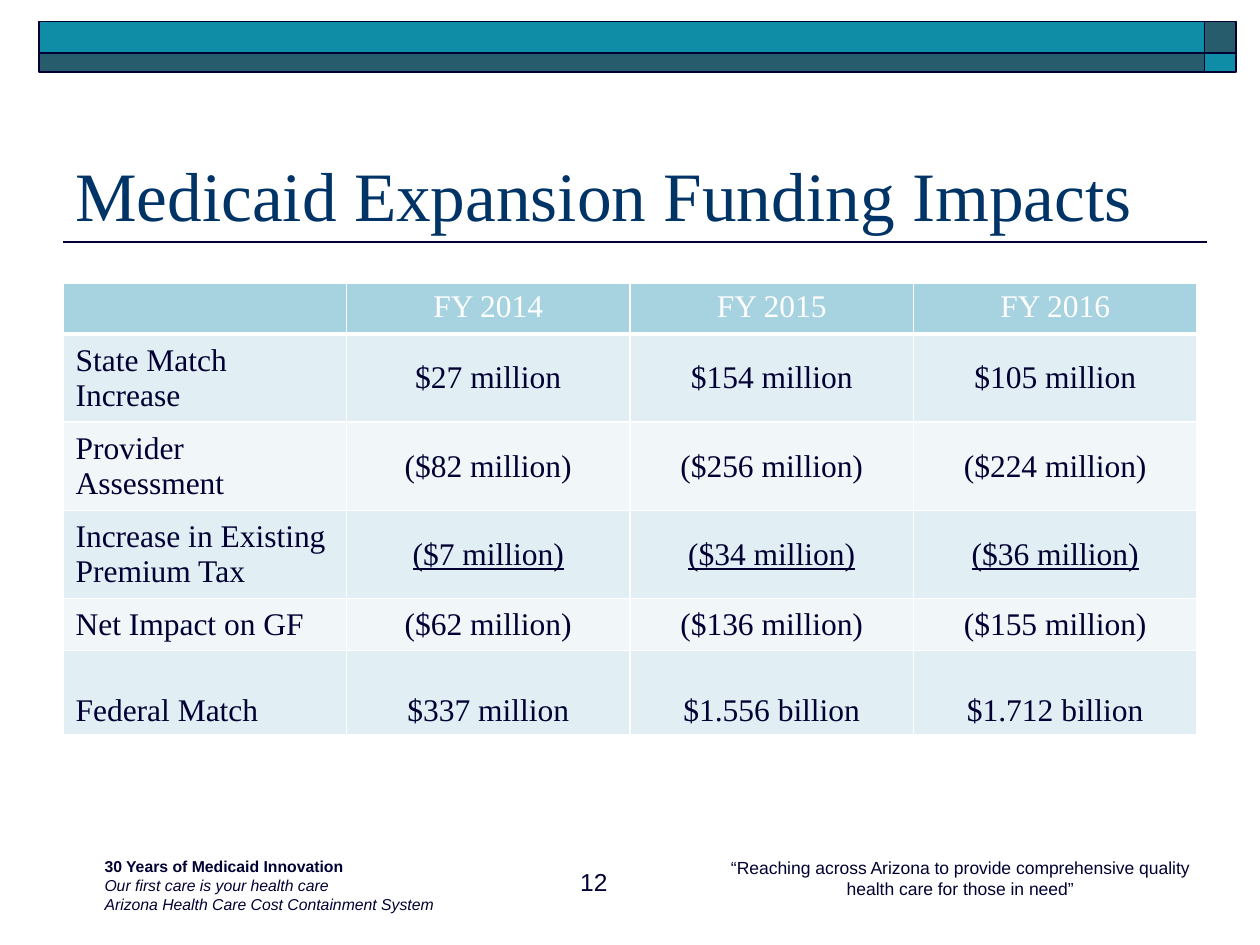
"""Build the Medicaid expansion funding slide with its table and footers."""
from dataclasses import dataclass

from pptx import Presentation
from pptx.dml.color import RGBColor
from pptx.enum import shapes, text
from pptx.oxml import parse_xml
from pptx.oxml.ns import nsdecls
from pptx.util import Inches, Pt


@dataclass(frozen=True)
class Theme:
    ink: str = "000033"
    navy: str = "003366"
    teal: str = "108DA6"
    slate: str = "275C6D"
    header: str = "A7D2DF"
    bands: tuple = ("E1EEF3", "F1F7F9")
    white: str = "FFFFFF"
    serif: str = "Times New Roman"
    sans: str = "Arial"
    title_size: float = 39.6
    table_size: int = 18
    number_size: int = 14
    quote_size: int = 10
    footer_size: int = 9


THEME = Theme()
TITLE = "Medicaid Expansion Funding Impacts"
NUMBER = "12"
QUOTE = "“Reaching across Arizona to provide comprehensive quality health care for those in need”"
FOOTER = [
    ("30 Years of Medicaid Innovation", {"bold": True}),
    ("Our first care is your health care", {"italic": True}),
    ("Arizona Health Care Cost Containment System", {"italic": True}),
]
ROWS = [
    ("", "FY 2014", "FY 2015", "FY 2016"),
    ("State Match Increase", "$27 million", "$154 million", "$105 million"),
    ("Provider Assessment", "($82 million)", "($256 million)", "($224 million)"),
    ("Increase in Existing Premium Tax", "($7 million)", "($34 million)", "($36 million)"),
    ("Net Impact on GF", "($62 million)", "($136 million)", "($155 million)"),
    ("Federal Match", "$337 million", "$1.556 billion", "$1.712 billion"),
]
ROW_HEIGHTS = [0.37, 0.65, 0.65, 0.65, 0.41, 0.67]
UNDERLINED_ROW = 3
COLUMN_WIDTH = 2.25
BANNER_COLUMNS = [(0.31, 9.25), (9.56, 0.25)]
BANNER_ROWS = [(0.17, 0.25), (0.42, 0.15)]

ALIGN = text.PP_ALIGN
ANCHOR = text.MSO_ANCHOR


def color(value):
    return RGBColor.from_string(value)


def write(paragraph, words, size, font=THEME.sans, fill=THEME.ink, align=ALIGN.LEFT,
          bold=False, italic=False, underline=False):
    paragraph.alignment = align
    span = paragraph.add_run()
    span.text = words
    span.font.name, span.font.size = font, Pt(size)
    span.font.bold, span.font.italic, span.font.underline = bold, italic, underline
    span.font.color.rgb = color(fill)


def add_box(page, place, lines, size, anchor=ANCHOR.TOP, indent=0.1, **style):
    frame = page.shapes.add_textbox(*map(Inches, place)).text_frame
    frame.word_wrap = True
    frame.vertical_anchor = anchor
    frame.margin_left = Inches(indent)
    for index, (words, extra) in enumerate(lines):
        paragraph = frame.add_paragraph() if index else frame.paragraphs[0]
        write(paragraph, words, size, **style, **extra)


def add_banner(page):
    for row, (top, height) in enumerate(BANNER_ROWS):
        for column, (left, width) in enumerate(BANNER_COLUMNS):
            block = page.shapes.add_shape(
                shapes.MSO_SHAPE.RECTANGLE, *map(Inches, (left, top, width, height)))
            block.shadow.inherit = False
            block.fill.solid()
            block.fill.fore_color.rgb = color(THEME.teal if row == column else THEME.slate)
            block.line.color.rgb = color(THEME.ink)
            block.line.width = Pt(1)


def add_rule(page):
    rule = page.shapes.add_connector(
        shapes.MSO_CONNECTOR.STRAIGHT, *map(Inches, (0.5, 1.92, 9.58, 1.92)))
    rule.line.color.rgb = color(THEME.ink)
    rule.line.width = Pt(1)
    rule._element.spPr.append(parse_xml(f"<a:effectLst {nsdecls('a')}/>"))


def set_borders(cell, bottom):
    properties = cell._tc.get_or_add_tcPr()
    for index, (side, width) in enumerate(zip("LRTB", (1, 1, 1, bottom))):
        properties.insert(index, parse_xml(
            f'<a:ln{side} {nsdecls("a")} w="{Pt(width)}"><a:solidFill>'
            f'<a:srgbClr val="{THEME.white}"/></a:solidFill></a:ln{side}>'))


def add_funding_table(page):
    columns = len(ROWS[0])
    table = page.shapes.add_table(
        len(ROWS), columns, Inches(0.5), Inches(2.25),
        Inches(COLUMN_WIDTH * columns), Inches(sum(ROW_HEIGHTS))).table
    for column in table.columns:
        column.width = Inches(COLUMN_WIDTH)
    last = len(ROWS) - 1
    for row, values in enumerate(ROWS):
        table.rows[row].height = Inches(ROW_HEIGHTS[row])
        anchor = {0: ANCHOR.TOP, last: ANCHOR.BOTTOM}.get(row, ANCHOR.MIDDLE)
        for column, words in enumerate(values):
            cell = table.cell(row, column)
            cell.vertical_anchor = anchor
            cell.fill.solid()
            cell.fill.fore_color.rgb = color(THEME.bands[(row - 1) % 2] if row else THEME.header)
            set_borders(cell, 1 if row else 3)
            if words:
                write(cell.text_frame.paragraphs[0], words, THEME.table_size, font=THEME.serif,
                      fill=THEME.ink if row else THEME.white,
                      align=ALIGN.CENTER if column else ALIGN.LEFT,
                      underline=row == UNDERLINED_ROW and column > 0)


def main():
    deck = Presentation()
    deck.slide_width, deck.slide_height = Inches(10), Inches(7.5)
    page = deck.slides.add_slide(deck.slide_layouts[6])
    add_rule(page)
    add_banner(page)
    add_box(page, (5.58, 6.75, 4.08, 0.43), [(QUOTE, {})], THEME.quote_size, align=ALIGN.CENTER)
    add_box(page, (0.5, 0.67, 9, 1.25), [(TITLE, {})], THEME.title_size,
            anchor=ANCHOR.BOTTOM, font=THEME.serif, fill=THEME.navy)
    add_funding_table(page)
    add_box(page, (4.42, 6.83, 0.5, 0.4), [(NUMBER, {})], THEME.number_size, align=ALIGN.RIGHT)
    add_box(page, (0.25, 6.75, 9.33, 0.52), FOOTER, THEME.footer_size, indent=0.58)
    deck.save("out.pptx")


if __name__ == "__main__":
    main()
